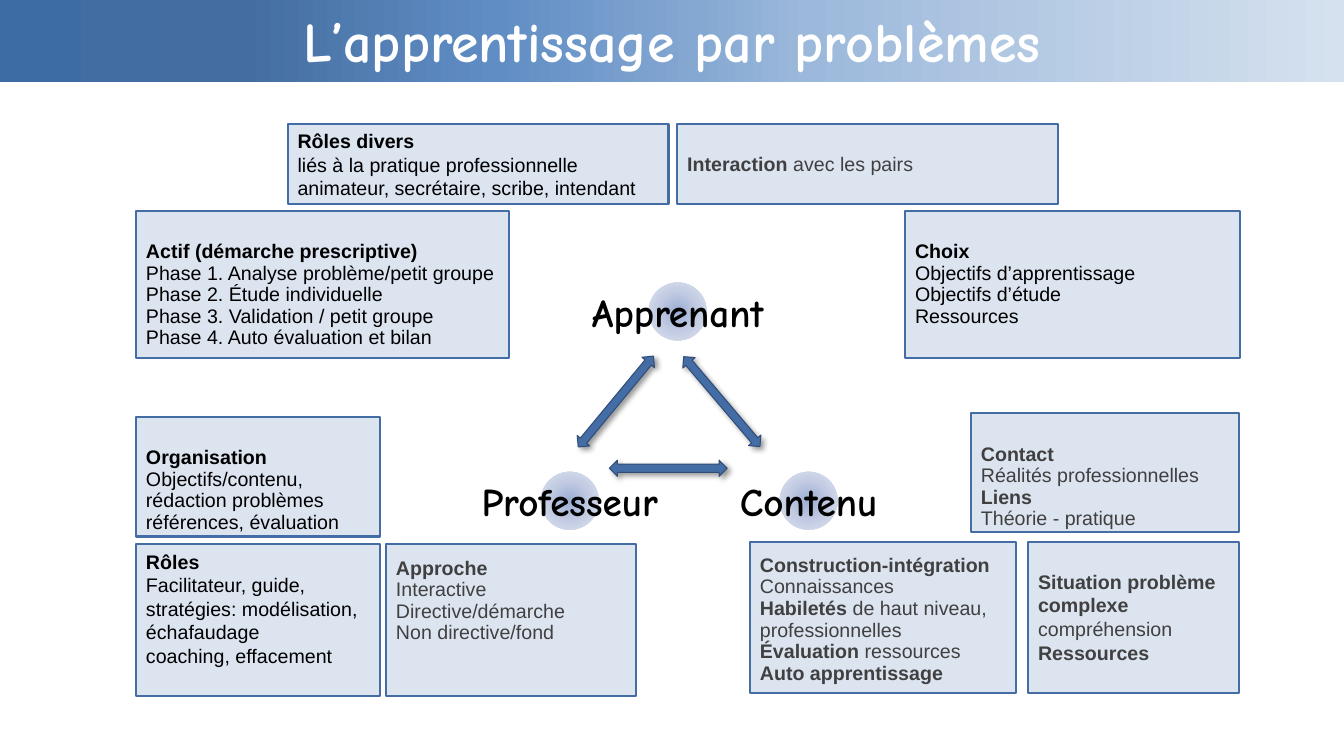
import lxml.etree
import pptx
import pptx.dml.color
import pptx.enum.shapes
import pptx.enum.text
import pptx.oxml
import pptx.oxml.ns
import pptx.util

Cm = pptx.util.Cm
Pt = pptx.util.Pt
SHAPES = pptx.enum.shapes.MSO_SHAPE
DRAWING = 'xmlns:a="http://schemas.openxmlformats.org/drawingml/2006/main"'
DISPLAY_FONT = "Comic Neue"
BLACK, GREY, WHITE = "000000", "404040", "FFFFFF"
BOX_FILL, BLUE, DARK_BLUE = "DCE4F0", "446CA5", "314D77"
TIGHT, NORMAL = 15.4, 16.8

BAND_STOPS = [(0, "3D6CA5"), (18, "446EA1"), (37, "608DC4"),
              (52, "85A8D2"), (60, "9CB9DB"), (100, "D5E1EF")]
DISC_STOPS = [(0, "9BADD4"), (50, "C3CCE3"), (100, "E2E6F1")]
LINEAR = '<a:lin ang="0" scaled="0"/>'
RADIAL = ('<a:path path="circle"><a:fillToRect l="50000" t="50000" '
          'r="50000" b="50000"/></a:path>')

POLES = [("Apprenant", 17.08, 7.85), ("Professeur", 14.36, 12.62),
         ("Contenu", 20.38, 12.62)]
ARROWS = [(15.52, 10.12, 39.6), (18.19, 10.12, 139.7), (16.84, 11.8, 90)]

BOXES = [
    (3.43, 13.72, 6.15, 3.81, BLACK, NORMAL, 0.13,
     ["*Rôles*", "Facilitateur, guide,",
      "stratégies: modélisation, échafaudage", "coaching, effacement"]),
    (3.43, 10.52, 6.15, 3, BLACK, TIGHT, 0.75,
     ["*Organisation*", "Objectifs/contenu,", "rédaction problèmes",
      "références, évaluation"]),
    (9.73, 13.72, 6.3, 3.81, GREY, TIGHT, 0.33,
     ["*Approche*", "Interactive", "Directive/démarche",
      "Non directive/fond"]),
    (7.25, 3.12, 9.6, 2.02, BLACK, NORMAL, 0.13,
     ["*Rôles divers*", "liés à la pratique professionnelle",
      "animateur, secrétaire, scribe, intendant"]),
    (3.43, 5.32, 9.4, 3.71, BLACK, TIGHT, 0.75,
     ["*Actif (démarche prescriptive)*",
      "Phase 1. Analyse problème/petit groupe",
      "Phase 2. Étude individuelle",
      "Phase 3. Validation / petit groupe",
      "Phase 4. Auto évaluation et bilan"]),
    (17.07, 3.12, 9.6, 2.02, GREY, TIGHT, 0.77,
     ["*Interaction *avec les pairs"]),
    (22.81, 5.32, 8.43, 3.71, BLACK, TIGHT, 0.75,
     ["*Choix*", "Objectifs d’apprentissage", "Objectifs d’étude",
      "Ressources"]),
    (18.9, 13.65, 6.7, 3.81, GREY, TIGHT, 0.33,
     ["*Construction-intégration*", "Connaissances",
      "*Habiletés *de haut niveau,", "professionnelles",
      "*Évaluation* ressources", "*Auto apprentissage*"]),
    (25.91, 13.65, 5.32, 3.81, GREY, NORMAL, 0.71,
     ["*Situation problème complexe *compréhension", "*Ressources*"]),
    (24.47, 10.41, 6.76, 3, GREY, TIGHT, 0.77,
     ["*Contact*", "Réalités professionnelles", "*Liens*",
      "Théorie - pratique"]),
]


def color(value):
    """Return the colour for a hex string."""
    return pptx.dml.color.RGBColor.from_string(value)


def format_font(font, name, size, value, bold):
    """Set the face, size, colour and weight of a font."""
    font.name = name
    font.size = Pt(size)
    font.bold = bold
    font.color.rgb = color(value)


def add_shape(slide, kind, left, top, width, height):
    """Add a preset shape without shadow, placed in centimetres."""
    shape = slide.shapes.add_shape(kind, Cm(left), Cm(top), Cm(width), Cm(height))
    shape.shadow.inherit = False
    return shape


def paint(shape, fill, line, width):
    """Give a shape a solid fill and an outline."""
    shape.fill.solid()
    shape.fill.fore_color.rgb = color(fill)
    shape.line.color.rgb = color(line)
    shape.line.width = Pt(width)


def paint_gradient(shape, stops, direction):
    """Give a shape a gradient fill and no outline."""
    marks = "".join(f'<a:gs pos="{position * 1000}"><a:srgbClr val="{value}"/></a:gs>'
                    for position, value in stops)
    gradient = pptx.oxml.parse_xml(
        f'<a:gradFill {DRAWING} rotWithShape="1"><a:gsLst>{marks}</a:gsLst>'
        f'{direction}</a:gradFill>')
    shape.line.fill.background()
    geometry = shape.element.spPr.find(pptx.oxml.ns.qn("a:prstGeom"))
    geometry.addnext(gradient)


def add_title(slide, text):
    """Fill the title placeholder and lay the shaded band behind it."""
    title = slide.shapes.title
    title.left, title.top, title.width, title.height = Cm(0), Cm(0.46), Cm(33.87), Cm(1.3)
    frame = title.text_frame
    frame.text = text
    frame.auto_size = pptx.enum.text.MSO_AUTO_SIZE.NONE
    frame.vertical_anchor = pptx.enum.text.MSO_ANCHOR.MIDDLE
    paragraph = frame.paragraphs[0]
    paragraph.alignment = pptx.enum.text.PP_ALIGN.CENTER
    paragraph.line_spacing = 0.9
    format_font(paragraph.runs[0].font, DISPLAY_FONT, 40, WHITE, True)
    band = add_shape(slide, SHAPES.RECTANGLE, 0, 0, 33.87, 2.06)
    paint_gradient(band, BAND_STOPS, LINEAR)
    title.element.addprevious(band.element)


def add_pole(slide, text, center_x, center_y):
    """Add a shaded disc with its label across it."""
    size = 1.46
    disc = add_shape(slide, SHAPES.OVAL, center_x - size / 2,
                     center_y - size / 2, size, size)
    paint_gradient(disc, DISC_STOPS, RADIAL)
    frame = disc.text_frame
    frame.word_wrap = False
    frame.vertical_anchor = pptx.enum.text.MSO_ANCHOR.MIDDLE
    frame.text = text
    paragraph = frame.paragraphs[0]
    paragraph.alignment = pptx.enum.text.PP_ALIGN.CENTER
    format_font(paragraph.runs[0].font, DISPLAY_FONT, 28, BLACK, True)


def add_box(slide, left, top, width, height, text_color, pitch, margin, lines):
    """Add a text box whose starred passages are bold."""
    box = add_shape(slide, SHAPES.RECTANGLE, left, top, width, height)
    paint(box, BOX_FILL, BLUE, 1.5)
    frame = box.text_frame
    frame.word_wrap = True
    frame.vertical_anchor = pptx.enum.text.MSO_ANCHOR.TOP
    frame.margin_top = Cm(margin)
    frame.margin_bottom = Cm(0)
    frame.text = "\n".join(lines)
    for paragraph, line in zip(frame.paragraphs, lines):
        paragraph.alignment = pptx.enum.text.PP_ALIGN.LEFT
        paragraph.line_spacing = Pt(pitch)
        paragraph.clear()
        for index, passage in enumerate(line.split("*")):
            if passage:
                run = paragraph.add_run()
                run.text = passage
                format_font(run.font, "Arial", 14, text_color, index % 2 == 1)


def add_arrow(slide, center_x, center_y, angle):
    """Add a turned double arrow with a soft shadow."""
    width, length = 0.41, 2.97
    arrow = add_shape(slide, SHAPES.UP_DOWN_ARROW, center_x - width / 2,
                      center_y - length / 2, width, length)
    arrow.rotation = angle
    paint(arrow, BLUE, DARK_BLUE, 0.75)
    effects = arrow.element.spPr.find(pptx.oxml.ns.qn("a:effectLst"))
    effects.append(pptx.oxml.parse_xml(
        f'<a:outerShdw {DRAWING} blurRad="{Pt(4)}" dist="{Pt(3)}" dir="2700000" '
        'rotWithShape="0"><a:srgbClr val="000000"><a:alpha val="40000"/>'
        '</a:srgbClr></a:outerShdw>'))


def main():
    """Build the slide and save it."""
    presentation = pptx.Presentation()
    presentation.slide_width = Cm(33.87)
    presentation.slide_height = Cm(19.05)
    slide = presentation.slides.add_slide(presentation.slide_layouts[5])
    add_title(slide, "L’apprentissage par problèmes")
    for pole in POLES:
        add_pole(slide, *pole)
    for box in BOXES:
        add_box(slide, *box)
    for arrow in ARROWS:
        add_arrow(slide, *arrow)
    presentation.save("out.pptx")


if __name__ == "__main__":
    main()
